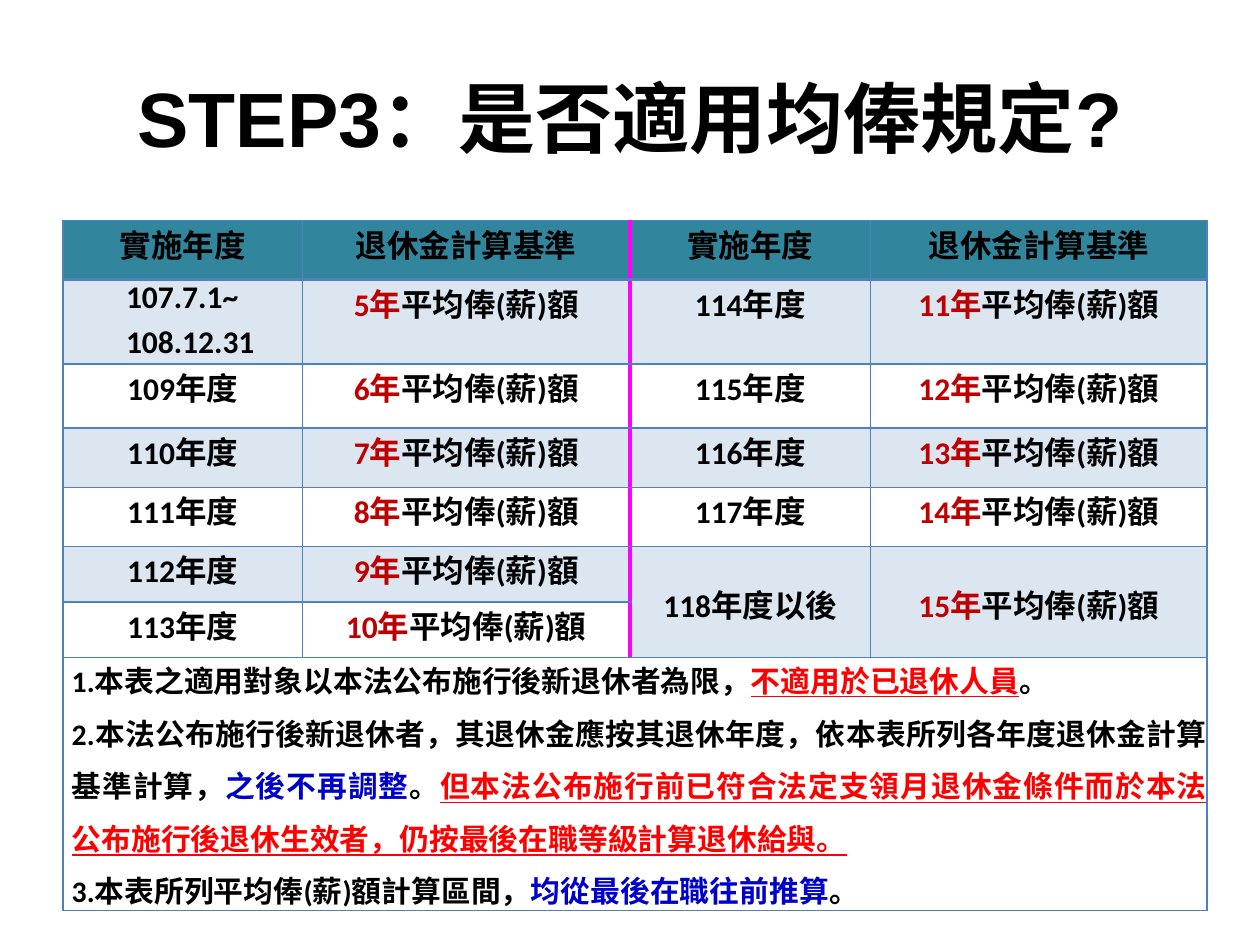
from pptx import Presentation
from pptx.util import Pt
from pptx.dml.color import RGBColor
from pptx.enum.text import MSO_ANCHOR as Anchor, PP_ALIGN as Align
from pptx.oxml.ns import qn
from lxml.etree import SubElement

BLACK = RGBColor(0, 0, 0)
WHITE = RGBColor(255, 255, 255)
DARK_RED = RGBColor(0xC0, 0, 0)
RED = RGBColor(255, 0, 0)
BLUE = RGBColor(0, 0, 0xCC)
TEAL = RGBColor(0x31, 0x85, 0x9C)
PALE = RGBColor(0xDC, 0xE6, 0xF1)
GRID = RGBColor(0x4F, 0x81, 0xBC)
MAGENTA = RGBColor(255, 0, 255)
LATIN, HAN = "Calibri", "Noto Sans CJK SC"

TITLE = "STEP3：是否適用均俸規定?"
HEADERS = ["實施年度", "退休金計算基準"] * 2
FIRST_PERIOD = ["107.7.1~", "108.12.31"]
BASIS = "平均俸(薪)額"
SCHEDULE = [
    (None, 5, "114年度", 11),
    ("109年度", 6, "115年度", 12),
    ("110年度", 7, "116年度", 13),
    ("111年度", 8, "117年度", 14),
    ("112年度", 9, "118年度以後", 15),
    ("113年度", 10, None, None),
]
NOTES = [
    [("1.本表之適用對象以本法公布施行後新退休者為限，", BLACK),
     ("不適用於已退休人員", RED), ("。", BLACK)],
    [("2.本法公布施行後新退休者，其退休金應按其退休年度，依本表所列各年度退休金計算 基準計算，", BLACK),
     ("之後不再調整", BLUE), ("。", BLACK),
     ("但本法公布施行前已符合法定支領月退休金條件而於本法 公布施行後退休生效者，仍按最後在職等級計算退休給與。", RED)],
    [("3.本表所列平均俸(薪)額計算區間，", BLACK),
     ("均從最後在職往前推算", BLUE), ("。", BLACK)],
]
NOTE_FORMATS = [(Align.LEFT, 1.2, None), (Align.JUSTIFY, 0.1, 1.22), (Align.LEFT, 4.6, None)]

COLUMNS = [136.8, 187.2, 137.5, 192.2]
ROWS = [33.8, 48.2, 36.7, 33.8, 33.8, 31.7, 31.7, 123.1]
SPACE_BEFORE = [5.5, 12.2, 7.2, 7.2, 7.2, 4.2, 4.2]
LAST = len(ROWS) - 1


def write(para, spans, size, latin=LATIN, align=Align.CENTER, before=0, indent=0, line=None):
    para.alignment = align
    para.space_before = Pt(before)
    if line:
        para.line_spacing = line
    para.font.size, para.font.bold, para.font.name = Pt(size), True, latin
    if indent:
        para._p.get_or_add_pPr().set("marL", str(Pt(indent)))
    for text, color in spans:
        span = para.add_run()
        span.text = text
        span.font.color.rgb = color
        if color == RED:
            span.font.underline = True
        SubElement(span._r.get_or_add_rPr(), qn("a:ea"), typeface=HAN)


def draw_borders(cell, row, column):
    left = (MAGENTA, 2.25) if column == 2 and row < LAST else (GRID, 1)
    right = (MAGENTA, 2.25) if column == 1 and row < LAST else (GRID, 1)
    top = (GRID, 2 if row == 1 else 1)
    bottom = (GRID, 2 if row == 0 else 1)
    properties = cell._tc.get_or_add_tcPr()
    edges = zip(("lnL", "lnR", "lnT", "lnB"), (left, right, top, bottom))
    for place, (name, (color, width)) in enumerate(edges):
        edge = properties.makeelement(qn("a:" + name), {"w": str(Pt(width))})
        fill = SubElement(edge, qn("a:solidFill"))
        SubElement(fill, qn("a:srgbClr"), val=str(color))
        properties.insert(place, edge)


deck = Presentation()
deck.slide_width, deck.slide_height = Pt(720), Pt(540)
page = deck.slides.add_slide(deck.slide_layouts[5])

title = page.shapes.title
title.left, title.top, title.width, title.height = Pt(36), Pt(21.6), Pt(648), Pt(90)
title.text_frame.vertical_anchor = Anchor.MIDDLE
write(title.text_frame.paragraphs[0], [(TITLE, BLACK)], 44, "Arial")

table = page.shapes.add_table(len(ROWS), len(COLUMNS), Pt(36), Pt(126),
                              Pt(sum(COLUMNS)), Pt(sum(ROWS))).table
for column, width in zip(table.columns, COLUMNS):
    column.width = Pt(width)
for row, height in zip(table.rows, ROWS):
    row.height = Pt(height)

for row in range(len(ROWS)):
    for column in range(len(COLUMNS)):
        cell = table.cell(row, column)
        cell.margin_left = cell.margin_right = cell.margin_top = cell.margin_bottom = 0
        cell.fill.solid()
        banded = row % 2 == 1 and row < LAST
        cell.fill.fore_color.rgb = TEAL if row == 0 else PALE if banded else WHITE
        draw_borders(cell, row, column)

for column in (2, 3):
    table.cell(5, column).merge(table.cell(6, column))
    table.cell(5, column).margin_top = Pt(20)
table.cell(LAST, 0).merge(table.cell(LAST, 3))

for column, header in enumerate(HEADERS):
    write(table.cell(0, column).text_frame.paragraphs[0], [(header, BLACK)], 18,
          before=SPACE_BEFORE[0])

for row, entries in enumerate(SCHEDULE, 1):
    for column, entry in enumerate(entries):
        if entry is None:
            continue
        spans = [(f"{entry}年", DARK_RED), (BASIS, BLACK)] if column % 2 else [(entry, BLACK)]
        write(table.cell(row, column).text_frame.paragraphs[0], spans, 18,
              before=SPACE_BEFORE[row])

period = table.cell(1, 0).text_frame
for index, text in enumerate(FIRST_PERIOD):
    para = period.add_paragraph() if index else period.paragraphs[0]
    write(para, [(text, BLACK)], 18, align=Align.LEFT, indent=36,
          before=3.5 * index, line=None if index else Pt(21.4))

notes = table.cell(LAST, 0).text_frame
for index, (spans, (align, before, line)) in enumerate(zip(NOTES, NOTE_FORMATS)):
    para = notes.add_paragraph() if index else notes.paragraphs[0]
    write(para, spans, 17, align=align, before=before, indent=5, line=line)

deck.save("out.pptx")
